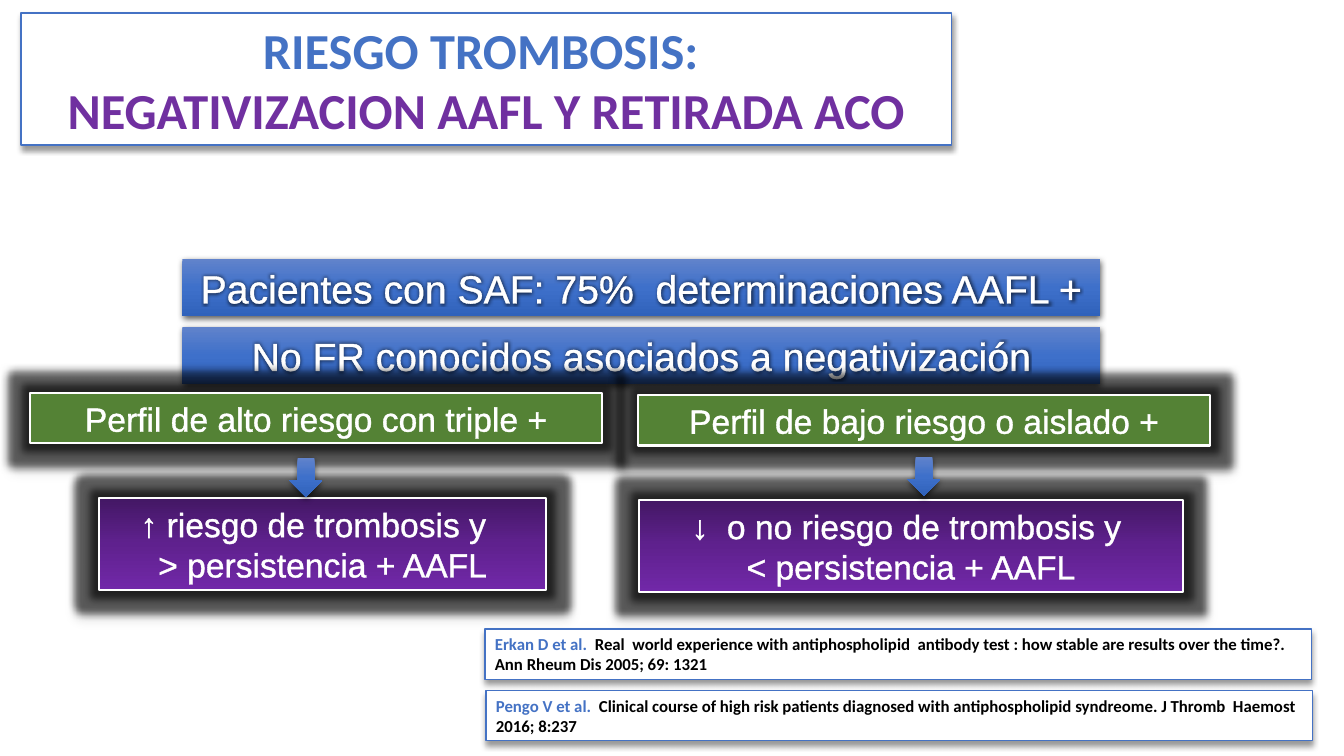
import pptx
import pptx.util
import pptx.dml.color
import pptx.enum.shapes
import pptx.enum.text
import pptx.oxml
import pptx.oxml.ns

RGB = pptx.dml.color.RGBColor
Inches, Pt = pptx.util.Inches, pptx.util.Pt
KIND = pptx.enum.shapes.MSO_SHAPE
ALIGN = pptx.enum.text.PP_ALIGN
qn = pptx.oxml.ns.qn
NS = pptx.oxml.ns.nsdecls("a")

WHITE = RGB(0xFF, 0xFF, 0xFF)
BLACK = RGB(0, 0, 0)
BLUE = RGB(0x44, 0x72, 0xC4)
GREEN = RGB(0x54, 0x82, 0x35)
VIOLET = RGB(0x70, 0x30, 0xA0)
SKY = [RGB(0x61, 0x83, 0xCB), RGB(0x3E, 0x70, 0xCA), RGB(0x30, 0x62, 0xBB)]
PLUM = [RGB(0x43, 0x17, 0x64), RGB(0x5F, 0x21, 0x8E), RGB(0x71, 0x28, 0xA8)]

# Content: each paragraph is a list of (text, colour) runs
TITLE = [[("RIESGO TROMBOSIS: ", BLUE)],
         [("NEGATIVIZACION AAFL Y RETIRADA ACO", VIOLET)]]
FACTS = ["Pacientes con SAF: 75%  determinaciones AAFL +",
         "No FR conocidos asociados a negativización"]
# Profile, outcome, left and top of profile, left and width of outcome, arrow
RISKS = [
    ("Perfil de alto riesgo con triple +",
     ["↑ riesgo de trombosis y  ", "> persistencia + AAFL"],
     (0.3, 3.9), (0.98, 4.44), (2.87, 4.54)),
    ("Perfil de bajo riesgo o aislado +",
     ["↓  o no riesgo de trombosis y ", "< persistencia + AAFL"],
     (6.33, 3.92), (6.34, 5.39), (9, 4.53)),
]
PAPERS = [
    [("Erkan D et al. ", BLUE),
     (" Real  world experience with antiphospholipid  antibody test : how stable "
      "are results over the time?. Ann Rheum Dis 2005; 69: 1321", BLACK)],
    [("Pengo V et al.  ", BLUE),
     ("Clinical course of high risk patients diagnosed with antiphospholipid "
      "syndreome. J Thromb  Haemost 2016; 8:237", BLACK)],
]

# Shadow as opacity %, blur and distance in points; glow as radius and opacity %
SOFT, DEEP, CARD = (63, 4.5, 1.5), (20, 5, 4), (40, 4, 3)
HALO, AURA = (11, 60), (5, 60)


def effects(shadow=None, glow=None):
    out = ""
    if glow:
        out += (f'<a:glow rad="{Pt(glow[0])}"><a:srgbClr val="{BLACK}">'
                f'<a:alpha val="{glow[1] * 1000}"/></a:srgbClr></a:glow>')
    if shadow:
        out += (f'<a:outerShdw blurRad="{Pt(shadow[1])}" dist="{Pt(shadow[2])}" '
                f'dir="5400000" rotWithShape="0"><a:srgbClr val="{BLACK}">'
                f'<a:alpha val="{shadow[0] * 1000}"/></a:srgbClr></a:outerShdw>')
    return pptx.oxml.parse_xml(f"<a:effectLst {NS}>{out}</a:effectLst>")


def paint(shape, fill, line, shadow, glow=None):
    if isinstance(fill, list):
        stops = "".join(f'<a:gs pos="{i * 50000}"><a:srgbClr val="{c}"/></a:gs>'
                        for i, c in enumerate(fill))
        grad = pptx.oxml.parse_xml(
            f'<a:gradFill {NS} rotWithShape="1"><a:gsLst>{stops}</a:gsLst>'
            '<a:lin ang="5400000" scaled="0"/></a:gradFill>')
        shape._element.spPr.find(qn("a:prstGeom")).addnext(grad)
    else:
        shape.fill.solid()
        shape.fill.fore_color.rgb = fill
    if line:
        shape.line.color.rgb = line[0]
        shape.line.width = Pt(line[1])
    else:
        shape.line.fill.background()
    shape._element.spPr.append(effects(shadow, glow))


def write(shape, paras, size, face, align, bold=False, ring=False, effect=None):
    frame = shape.text_frame
    frame.word_wrap = True
    frame.vertical_anchor = pptx.enum.text.MSO_ANCHOR.MIDDLE
    for i, runs in enumerate(paras):
        para = frame.paragraphs[0] if i == 0 else frame.add_paragraph()
        para.alignment = align
        para.line_spacing = 1.0
        para.space_before = Pt(0)
        for text, color in runs:
            run = para.add_run()
            run.text = text
            font = run.font
            font.size, font.name, font.bold = Pt(size), face, bold
            font.color.rgb = color
            props = run._r.get_or_add_rPr()
            if ring:
                props.insert(0, pptx.oxml.parse_xml(
                    f'<a:ln {NS} w="{Pt(1.45)}"><a:solidFill>'
                    f'<a:srgbClr val="{WHITE}"/></a:solidFill></a:ln>'))
            if effect:
                props.find(qn("a:solidFill")).addnext(effects(**effect))


deck = pptx.Presentation()
deck.slide_width, deck.slide_height = Inches(13.33), Inches(7.5)
slide = deck.slides.add_slide(deck.slide_layouts[5])


def add(left, top, width, height, kind=KIND.RECTANGLE):
    return slide.shapes.add_shape(kind, *map(Inches, (left, top, width, height)))


def label(shape, lines, size, effect=None):
    write(shape, [[(line, WHITE)] for line in lines], size, "Arial",
          ALIGN.CENTER, ring=True, effect=effect)


# Title
title = slide.shapes.title
title.left, title.top = Inches(0.21), Inches(0.13)
title.width, title.height = Inches(9.23), Inches(1.31)
paint(title, WHITE, (BLUE, 1), CARD)
write(title, TITLE, 36, "Calibri", ALIGN.CENTER, bold=True,
      effect={"shadow": (40, 3, 1.5)})

# Key facts
for row, fact in enumerate(FACTS):
    bar = add(1.81, 2.57 + 0.67 * row, 9.1, 0.57)
    paint(bar, SKY, None, SOFT)
    label(bar, [fact], 28, {"glow": AURA})

# Risk profiles, each with an arrow to its outcome
for name, result, (left, top), (side, width), spot in RISKS:
    head = add(left, top, 5.67, 0.5)
    paint(head, GREEN, (WHITE, 1.5), DEEP, HALO)
    label(head, [name], 24)
    box = add(side, top + 1.04, width, 0.91)
    paint(box, PLUM, (WHITE, 1.5), DEEP, HALO)
    label(box, result, 24)
    arrow = add(*spot, 0.33, 0.39, KIND.DOWN_ARROW)
    paint(arrow, SKY, None, SOFT)

# References
for row, paper in enumerate(PAPERS):
    note = add(4.81 + 0.01 * row, 6.24 + 0.61 * row, 8.2, 0.5)
    paint(note, WHITE, (BLUE, 1), CARD)
    write(note, [paper], 12, "Calibri", ALIGN.LEFT, bold=True)

deck.save("out.pptx")
